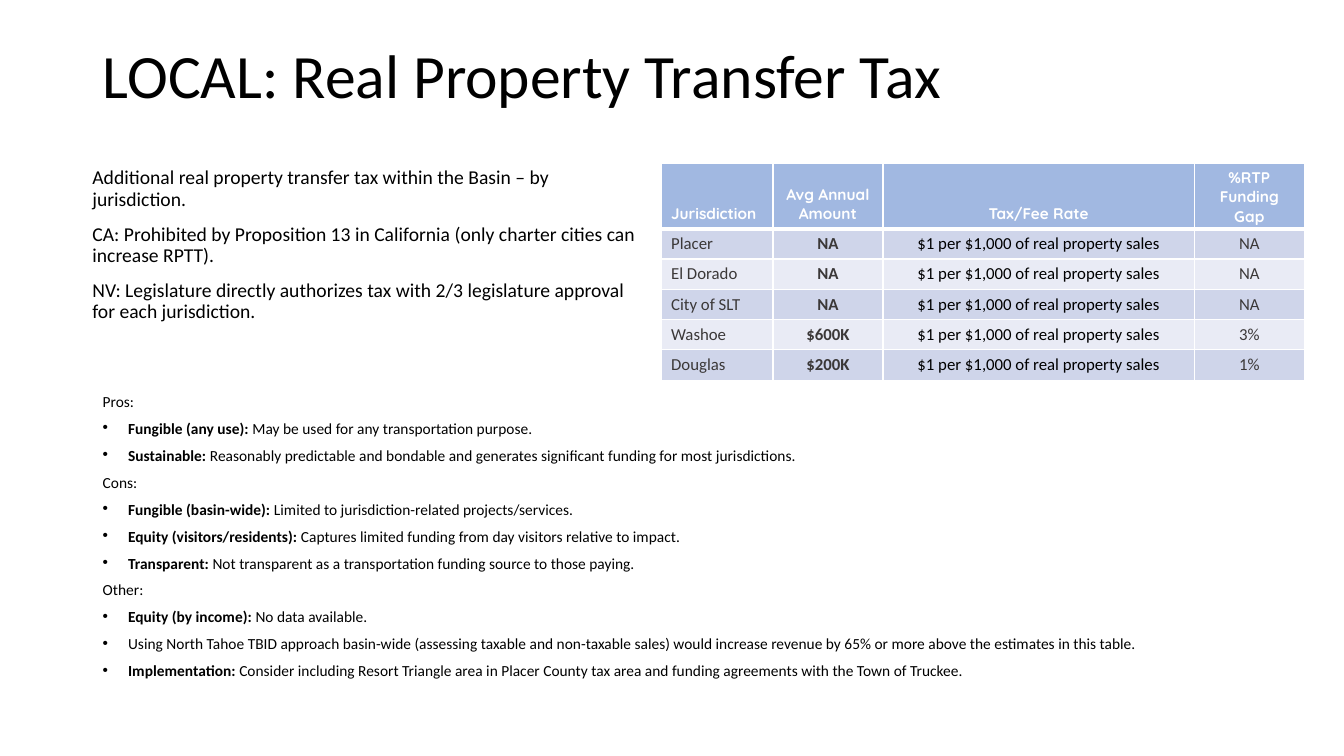
"""Build the slide on the real property transfer tax."""
from lxml.etree import SubElement
from pptx import Presentation
from pptx.dml.color import RGBColor
from pptx.enum.text import MSO_ANCHOR, PP_ALIGN
from pptx.oxml import parse_xml
from pptx.oxml.ns import nsdecls, qn
from pptx.util import Cm, Pt

BLACK = RGBColor(0x00, 0x00, 0x00)
WHITE = RGBColor(0xFF, 0xFF, 0xFF)
GREY = RGBColor(0x3B, 0x38, 0x38)
BLUE = RGBColor(0x44, 0x72, 0xC4)
BANDS = (RGBColor(0xCF, 0xD5, 0xEA), RGBColor(0xE9, 0xEB, 0xF5))

TITLE = "LOCAL: Real Property Transfer Tax"
SUMMARY = (
    "Additional real property transfer tax within the Basin – by jurisdiction.",
    "CA: Prohibited by Proposition 13 in California (only charter cities can increase RPTT).",
    "NV: Legislature directly authorizes tax with 2/3 legislature approval for each jurisdiction.",
)
HEADINGS = ("Jurisdiction", "Avg Annual Amount", "Tax/Fee Rate", "%RTP Funding Gap")
RATE = "$1 per $1,000 of real property sales"
REVENUES = (
    ("Placer", "NA", "NA"),
    ("El Dorado", "NA", "NA"),
    ("City of SLT", "NA", "NA"),
    ("Washoe", "$600K", "3%"),
    ("Douglas", "$200K", "1%"),
)
ASSESSMENT = {
    "Pros:": (
        ("Fungible (any use): ", "May be used for any transportation purpose."),
        ("Sustainable: ", "Reasonably predictable and bondable and generates significant "
                          "funding for most jurisdictions."),
    ),
    "Cons:": (
        ("Fungible (basin-wide): ", "Limited to jurisdiction-related projects/services."),
        ("Equity (visitors/residents): ",
         "Captures limited funding from day visitors relative to impact."),
        ("Transparent: ", "Not transparent as a transportation funding source to those paying."),
    ),
    "Other:": (
        ("Equity (by income): ", "No data available."),
        ("", "Using North Tahoe TBID approach basin-wide (assessing taxable and non-taxable "
             "sales) would increase revenue by 65% or more above the estimates in this table."),
        ("Implementation: ", "Consider including Resort Triangle area in Placer County tax area "
                             "and funding agreements with the Town of Truckee."),
    ),
}


class TaxSlide:
    """Holds the slide and its style, and draws each kind of element."""

    body_font = "Calibri"
    heading_font = "Quicksand"

    def __init__(self, deck):
        """Add a blank slide to the deck."""
        self.slide = deck.slides.add_slide(deck.slide_layouts[6])

    def run(self, paragraph, words, size, color=BLACK, bold=False, font=body_font):
        """Add one styled run."""
        run = paragraph.add_run()
        run.text = words
        run.font.name = font
        run.font.size = Pt(size)
        run.font.bold = bold
        run.font.color.rgb = color

    def text(self, place, lines, size, spacing, before=0):
        """Add a text box of (bulleted, label, words) lines."""
        frame = self.slide.shapes.add_textbox(*map(Cm, place)).text_frame
        frame.word_wrap = True
        for index, (bulleted, label, words) in enumerate(lines):
            paragraph = frame.paragraphs[0] if index == 0 else frame.add_paragraph()
            paragraph.line_spacing = spacing
            paragraph.space_before = Pt(before)
            if bulleted:
                self.bullet(paragraph)
            if label:
                self.run(paragraph, label, size, bold=True)
            self.run(paragraph, words, size)

    def bullet(self, paragraph):
        """Give a paragraph a hanging bullet."""
        properties = paragraph._p.get_or_add_pPr()
        indent = Cm(0.64)
        properties.set("marL", str(indent))
        properties.set("indent", str(-indent))
        SubElement(properties, qn("a:buFont"), typeface="Arial")
        SubElement(properties, qn("a:buChar"), char="•")

    def table(self, place, widths, heights):
        """Add an empty table with the given columns and rows."""
        table = self.slide.shapes.add_table(
            len(heights), len(widths), *map(Cm, place), Cm(sum(widths)), Cm(sum(heights))).table
        for column, width in zip(table.columns, widths):
            column.width = Cm(width)
        for row, height in zip(table.rows, heights):
            row.height = Cm(height)
        return table

    def cell(self, cell, words, fill, anchor, centred, top=1, bottom=1, alpha=100, **style):
        """Fill, border and label one table cell."""
        cell.fill.solid()
        cell.fill.fore_color.rgb = fill
        cell.vertical_anchor = anchor
        properties = cell._tc.get_or_add_tcPr()
        if alpha < 100:
            tint = properties.find(".//" + qn("a:srgbClr"))
            SubElement(tint, qn("a:alpha"), val=str(alpha * 1000))
        borders = (("L", 1), ("R", 1), ("T", top), ("B", bottom))
        for index, (side, width) in enumerate(borders):
            properties.insert(index, parse_xml(
                f'<a:ln{side} {nsdecls("a")} w="{Pt(width)}"><a:solidFill>'
                f'<a:srgbClr val="{WHITE}"/></a:solidFill></a:ln{side}>'))
        paragraph = cell.text_frame.paragraphs[0]
        paragraph.alignment = PP_ALIGN.CENTER if centred else PP_ALIGN.LEFT
        self.run(paragraph, words, **style)


def main():
    """Build and save the slide."""
    deck = Presentation()
    deck.slide_width, deck.slide_height = Cm(33.87), Cm(19.05)
    page = TaxSlide(deck)

    page.text((2.34, 1.02, 29.21, 3.68), [(False, "", TITLE)], 44, 0.9)
    page.text((2.08, 4.11, 14.33, 5.79), [(False, "", words) for words in SUMMARY], 14, 0.9, 10)

    revenue_table = page.table((16.66, 4.11), (2.82, 2.77, 7.85, 2.77),
                               [1.63] + [0.74] * len(REVENUES))
    for column, heading in enumerate(HEADINGS):
        page.cell(revenue_table.cell(0, column), heading, BLUE, MSO_ANCHOR.BOTTOM, column > 0,
                  bottom=3, alpha=50, size=11, color=WHITE, bold=True, font=page.heading_font)
    for row, (jurisdiction, amount, gap) in enumerate(REVENUES, 1):
        for column, words in enumerate((jurisdiction, amount, RATE, gap)):
            page.cell(revenue_table.cell(row, column), words, BANDS[(row - 1) % 2],
                      MSO_ANCHOR.MIDDLE, column > 0, top=3 if row == 1 else 1, size=12,
                      color=BLACK if words == RATE else GREY, bold=column == 1)

    assessment_lines = []
    for heading, points in ASSESSMENT.items():
        assessment_lines.append((False, "", heading))
        assessment_lines += [(True, label, words) for label, words in points]
    page.text((2.34, 9.88, 27.56, 8.97), assessment_lines, 11, 0.7, 10)

    deck.save("out.pptx")


if __name__ == "__main__":
    main()
